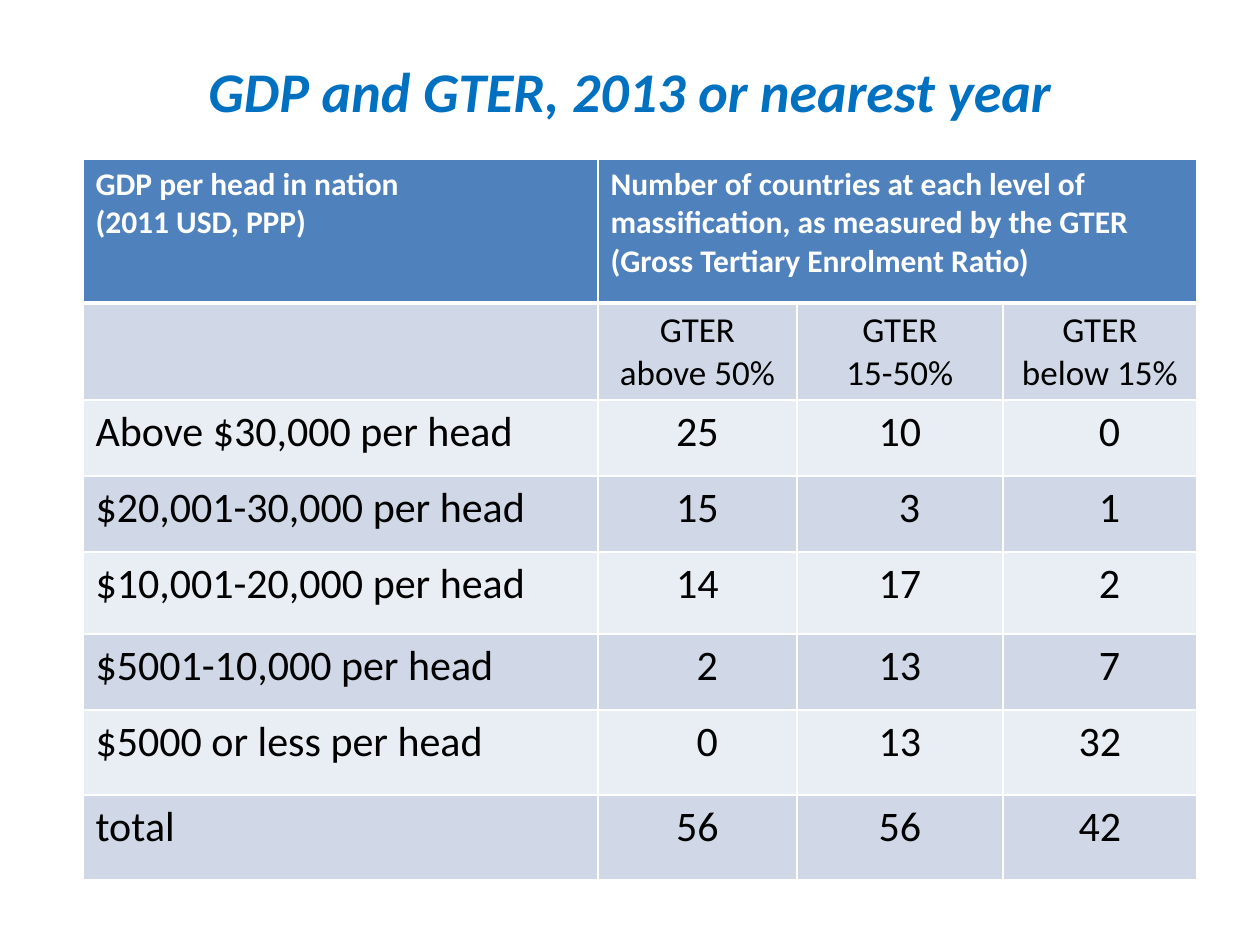
import lxml.etree
import pptx
import pptx.dml.color
import pptx.enum.text
import pptx.oxml.ns
import pptx.util

PX = 914400 // 126
ALIGN = pptx.enum.text.PP_ALIGN
qn = pptx.oxml.ns.qn


def set_font(p, color, **values):
    p.font.color.rgb = pptx.dml.color.RGBColor.from_string(color)
    for name, value in values.items():
        setattr(p.font, name, value)


def add_border(cell, side, width, color="FFFFFF"):
    """Draw one cell side (L, R, T or B); width is in points."""
    ln = lxml.etree.SubElement(cell._tc.get_or_add_tcPr(), qn(f"a:ln{side}"),
                               w=str(pptx.util.Pt(width)))
    fill = lxml.etree.SubElement(ln, qn("a:solidFill"))
    lxml.etree.SubElement(fill, qn("a:srgbClr"), val=color)


prs = pptx.Presentation()
prs.slide_width, prs.slide_height = 1260 * PX, 945 * PX
s = prs.slides.add_slide(prs.slide_layouts[6])

# Title
sp = s.shapes.add_textbox(63 * PX, 38 * PX, 1134 * PX, 105 * PX)
tf = sp.text_frame
tf.word_wrap = True
tf.vertical_anchor = pptx.enum.text.MSO_ANCHOR.MIDDLE
p = tf.paragraphs[0]
p.text = "GDP and GTER, 2013 or nearest year"
p.alignment = ALIGN.CENTER
set_font(p, "0070C0", name="Calibri", size=pptx.util.Pt(32), bold=True, italic=True)

# Table
rows = [
    ["GDP per head in nation\n(2011 USD, PPP)",
     "Number of countries at each level of massification, "
     "as measured by the GTER (Gross Tertiary Enrolment Ratio)", "", ""],
    ["", "GTER\nabove 50%", "GTER\n15-50%", "GTER below 15%"],
    ["Above $30,000 per head", "25", "10", "0"],
    ["$20,001-30,000 per head", "15", "3", "1"],
    ["$10,001-20,000 per head", "14", "17", "2"],
    ["$5001-10,000 per head", "2", "13", "7"],
    ["$5000 or less per head", "0", "13", "32"],
    ["total", "56", "56", "42"],
]
widths = [515, 199, 206, 194]
heights = [144, 97, 76, 76, 82, 76, 85, 85]

table = s.shapes.add_table(len(rows), len(widths), 83 * PX, 159 * PX,
                           sum(widths) * PX, sum(heights) * PX).table
for column, width in zip(table.columns, widths):
    column.width = width * PX
for row, height in zip(table.rows, heights):
    row.height = height * PX

for i, texts in enumerate(rows):
    header = i == 0
    size = {0: 18, 1: 20}.get(i, 24)
    fill = "4F81BD" if header else ("D0D8E8" if i % 2 else "E9EDF4")
    for j, text in enumerate(texts):
        cell = table.cell(i, j)
        for side in "LRTB":
            thick = (header and side == "B") or (i == 1 and side == "T")
            add_border(cell, side, 3 if thick else 1)
        cell.fill.solid()
        cell.fill.fore_color.rgb = pptx.dml.color.RGBColor.from_string(fill)
        cell.text = text
        if len(text) == 1:  # line single digits up with the units
            cell.margin_left = 32 * PX
        for p in cell.text_frame.paragraphs:
            p.alignment = ALIGN.CENTER if j and not header else ALIGN.LEFT
            set_font(p, "FFFFFF" if header else "000000", name="Calibri",
                     size=pptx.util.Pt(size), bold=header)

table.cell(0, 1).merge(table.cell(0, 3))

prs.save("out.pptx")
